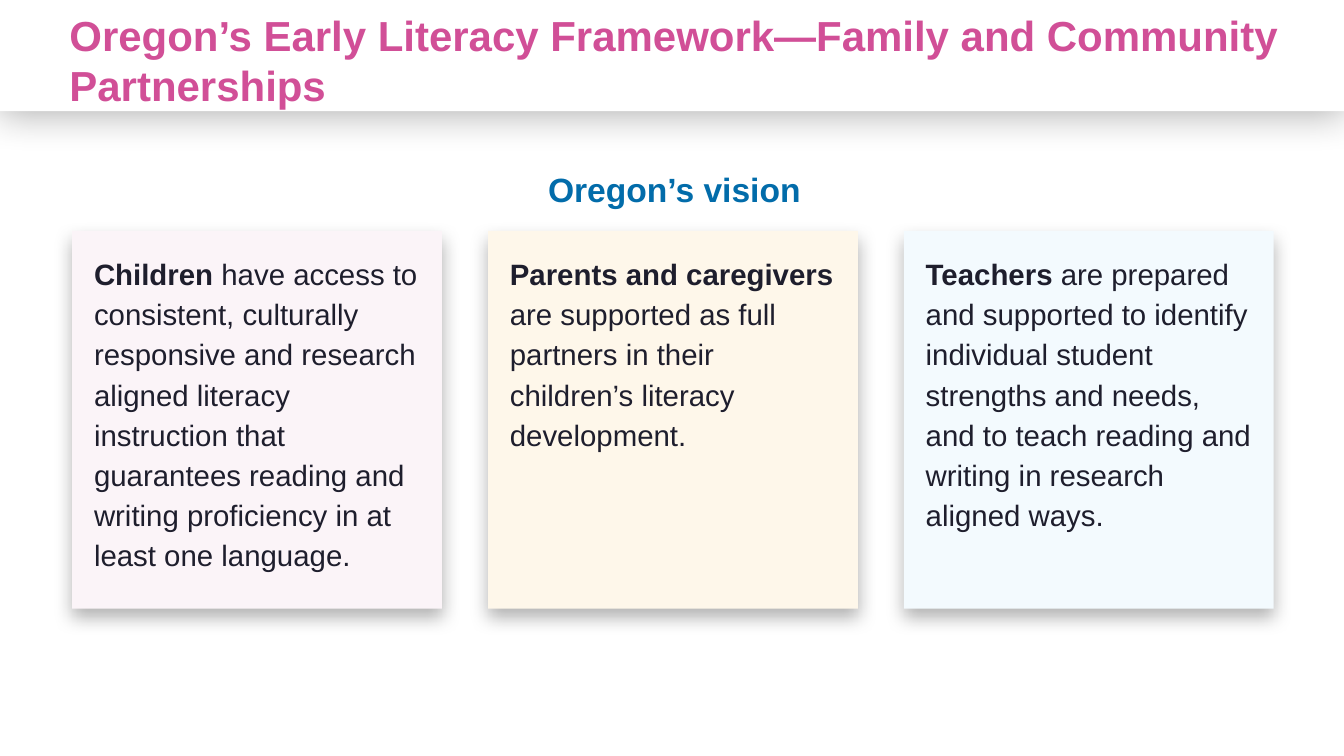
from lxml.etree import SubElement
from pptx import Presentation
from pptx.dml.color import RGBColor
from pptx.enum.shapes import MSO_SHAPE as Preset
from pptx.enum.text import MSO_ANCHOR as Anchor, PP_ALIGN as Align
from pptx.oxml.ns import qn
from pptx.util import Cm, Pt

COLORS = {
    "white": "FFFFFF",
    "black": "000000",
    "pink": "D14F97",
    "blue": "026CAA",
    "ink": "1E1E2D",
    "rose": "FBF4F8",
    "cream": "FEF7EA",
    "sky": "F3FAFE",
}


def write_text(shape, bold_text, plain_text="", size=21, color="ink", align=Align.LEFT,
               spacing=1.14, inset=0.51, left_inset=0.51):
    frame = shape.text_frame
    frame.word_wrap = True
    frame.vertical_anchor = Anchor.TOP
    frame.margin_left = Cm(left_inset)
    frame.margin_top = frame.margin_right = frame.margin_bottom = Cm(inset)
    paragraph = frame.paragraphs[0]
    paragraph.alignment = align
    paragraph.line_spacing = spacing
    for text, bold in ((bold_text, True), (plain_text, False)):
        if text:
            run = paragraph.add_run()
            run.text = text
            run.font.name = "Arial"
            run.font.size = Pt(size)
            run.font.bold = bold
            run.font.color.rgb = RGBColor.from_string(COLORS[color])


def add_panel(left, top, width, height, color, blur, distance):
    shape = slide.shapes.add_shape(Preset.RECTANGLE, Cm(left), Cm(top), Cm(width), Cm(height))
    shape.fill.solid()
    shape.fill.fore_color.rgb = RGBColor.from_string(COLORS[color])
    shape.line.fill.background()
    shape.shadow.inherit = False
    effects = shape.element.spPr.find(qn("a:effectLst"))
    shadow = SubElement(effects, qn("a:outerShdw"), blurRad=str(Pt(blur)), dist=str(Pt(distance)),
                        dir="5400000", algn="t", rotWithShape="0")
    shadow_color = SubElement(shadow, qn("a:srgbClr"), val=COLORS["black"])
    SubElement(shadow_color, qn("a:alpha"), val="30000")
    return shape


presentation = Presentation()
presentation.slide_width = Cm(33.87)
presentation.slide_height = Cm(19.05)
slide = presentation.slides.add_slide(presentation.slide_layouts[6])

add_panel(0, 0, 33.87, 2.8, "white", blur=28, distance=3)

title = slide.shapes.add_textbox(Cm(1.5), Cm(0.1), Cm(32), Cm(2.82))
write_text(title, "Oregon’s Early Literacy Framework—Family and Community Partnerships",
           size=30, color="pink", spacing=1, inset=0.13, left_inset=0.25)

heading = slide.shapes.add_textbox(Cm(1.17), Cm(3.61), Cm(31.65), Cm(2.11))
write_text(heading, "Oregon’s vision", size=24, color="blue", align=Align.CENTER)

cards = [
    ("rose", "Children", " have access to consistent, culturally responsive and research aligned "
     "literacy instruction that guarantees reading and writing proficiency in at least one language."),
    ("cream", "Parents and caregivers ", "are supported as full partners in their "
     "children’s literacy development."),
    ("sky", "Teachers", " are prepared and supported to identify individual student strengths "
     "and needs, and to teach reading and writing in research aligned ways."),
]
for index, (color, audience, vision) in enumerate(cards):
    card = add_panel(1.82 + index * 10.48, 5.82, 9.32, 9.52, color, blur=13, distance=6)
    write_text(card, audience, vision, left_inset=0.55)

presentation.save("out.pptx")
